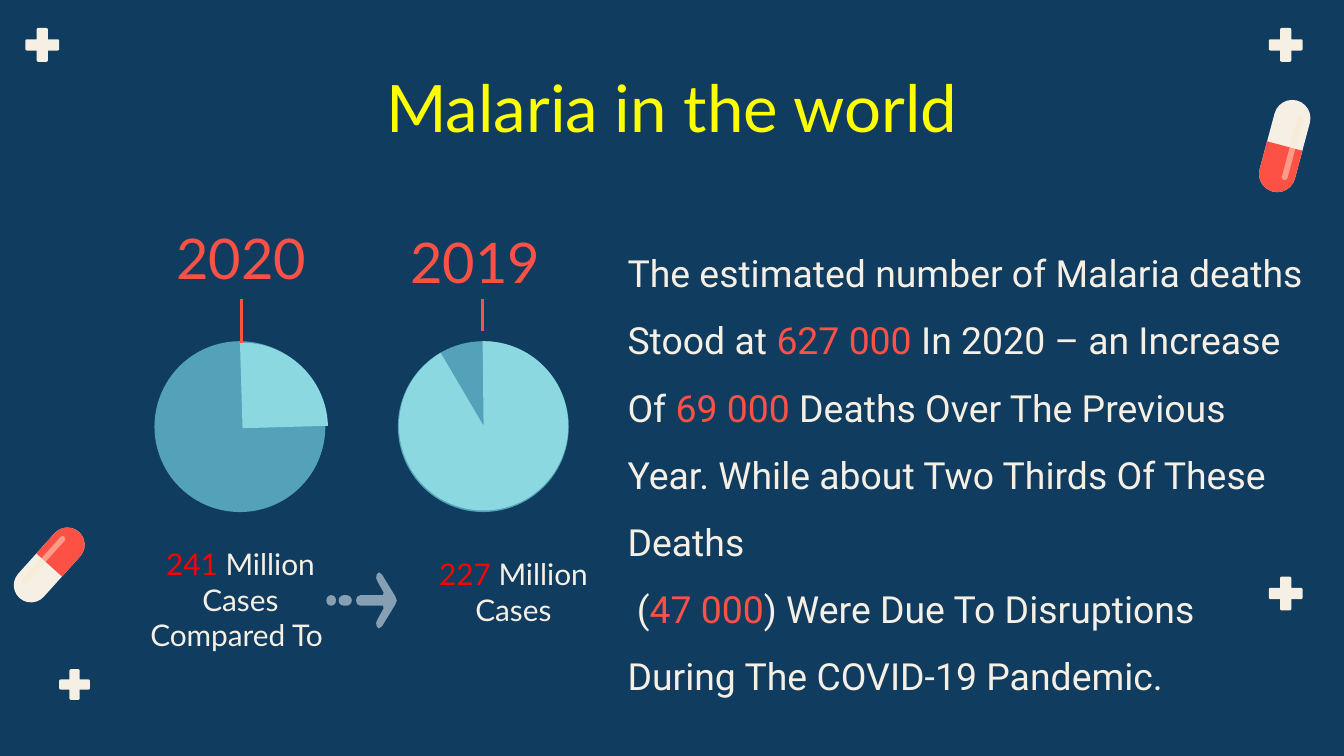
from math import cos, pi, radians, sin

from lxml import etree
from pptx import Presentation
from pptx.dml.color import RGBColor
from pptx.enum.shapes import MSO_CONNECTOR, MSO_SHAPE
from pptx.enum.text import MSO_ANCHOR, PP_ALIGN
from pptx.oxml.ns import qn
from pptx.util import Cm, Pt

CENTER, LEFT = PP_ALIGN.CENTER, PP_ALIGN.LEFT
TOP, MIDDLE = MSO_ANCHOR.TOP, MSO_ANCHOR.MIDDLE
OVAL, PIE = MSO_SHAPE.OVAL, MSO_SHAPE.PIE
ROUNDED, DOME = MSO_SHAPE.ROUNDED_RECTANGLE, MSO_SHAPE.ROUND_2_SAME_RECTANGLE
STRAIGHT = MSO_CONNECTOR.STRAIGHT

NAVY, CREAM, CORAL, RED, YELLOW = "103C60", "F6EFE4", "FE5145", "FF0000", "FFFF00"
TEAL, AQUA, STEEL, SHINE = "53A2B9", "8CD8E1", "869FB2", "FAE9CD"

TEXTS = [
    ((1.98, 1.02, 21.44, 1.6), "Lato", 35, CENTER, TOP, 1,
     [[("Malaria in the world", YELLOW)]]),
    ((2.51, 4.06, 4.11, 1.6), "Lato", 30, CENTER, MIDDLE, 1, [[("2020", CORAL)]]),
    ((6.93, 4.14, 4.11, 1.6), "Lato", 30, CENTER, MIDDLE, 1, [[("2019", CORAL)]]),
    ((2.49, 10.06, 4.11, 2.59), "Lato", 16, CENTER, TOP, 1,
     [[("241", RED), (" Million Cases Compared To ", CREAM)]]),
    ((7.65, 10.26, 4.11, 2.59), "Lato", 16, CENTER, TOP, 1,
     [[("227", RED), (" Million Cases", CREAM)]]),
    ((11.61, 4.06, 13.44, 8.79), "Roboto", 20, LEFT, TOP, 1.5, [
        [("The estimated number of Malaria deaths Stood at ", CREAM),
         ("627 000 ", CORAL),
         ("In 2020 – an Increase Of ", CREAM),
         ("69 000 ", CORAL),
         ("Deaths Over The Previous Year. While about Two Thirds Of These Deaths", CREAM)],
        [(" (", CREAM),
         ("47 000", CORAL),
         (") Were Due To Disruptions During The COVID-19 Pandemic.", CREAM)],
    ]),
]
CROSSES = [(1.12, 12.65, 0.58), (23.98, 10.9, 0.64), (23.98, 0.53, 0.64), (0.48, 0.53, 0.64)]
PILLS = [(0.93, 10.68, 0.65, 1.68, 42), (24.28, 2.76, 0.69, 1.78, 195)]
DISCS = [
    {"disc": (2.92, 6.45, 3.23), "slice": (2.97, 6.48, 3.23),
     "angles": (268.28, 358.38), "stem": (4.57, 5.66, 6.48)},
    {"disc": (7.52, 6.45, 3.23), "slice": (7.54, 6.45, 3.2),
     "angles": (269.37, 239.51), "stem": (9.12, 5.66, 6.25)},
]
ARROW_AXIS = 11.35
ARROW_UPPER = [(7.5, 11.35), (7.47, 11.27), (7.22, 10.86), (7.16, 10.82),
               (7.12, 10.86), (7.11, 10.93), (7.14, 11), (7.25, 11.2),
               (7.24, 11.25), (6.81, 11.25), (6.75, 11.28), (6.73, 11.35)]
ARROW_DOTS = [(6.4, 0.25), (6.17, 0.18)]
DOT_HEIGHT = 0.2


def color(value):
    return RGBColor.from_string(value)


def paint(shape, fill):
    shape.shadow.inherit = False
    shape.fill.solid()
    shape.fill.fore_color.rgb = color(fill)
    shape.line.fill.background()
    return shape


def add_preset(page, kind, left, top, width, height, fill):
    return paint(page.shapes.add_shape(kind, Cm(left), Cm(top), Cm(width), Cm(height)), fill)


def add_outline(page, points, fill):
    corners = [(Cm(x), Cm(y)) for x, y in points]
    builder = page.shapes.build_freeform(*corners[0])
    builder.add_line_segments(corners[1:], close=True)
    return paint(builder.convert_to_shape(), fill)


def add_cross(page, left, top, size):
    middle, arm, tip, radius = size / 2, size / 6, size / 2, size * 0.05
    points = []
    for turn in range(4):
        angle = turn * pi / 2
        local = [(arm, -arm)]
        for side in (-1, 1):
            for step in range(4):
                bend = pi / 6 * (step if side < 0 else 3 - step)
                local.append((tip - radius + radius * sin(bend),
                              side * (arm - radius + radius * cos(bend))))
        points += [(left + middle + x * cos(angle) - y * sin(angle),
                    top + middle + x * sin(angle) + y * cos(angle)) for x, y in local]
    add_outline(page, points, CREAM)


def add_pill(page, center_x, center_y, width, length, rotation):
    angle = radians(rotation)
    parts = [
        (ROUNDED, width, length, 0, 0, CREAM),
        (DOME, width, length / 2, 0, -length / 4, CORAL),
        (ROUNDED, width * 0.16, length * 0.7, -width * 0.22, 0, SHINE),
    ]
    for kind, wide, tall, across, along, fill in parts:
        x = center_x + across * cos(angle) - along * sin(angle)
        y = center_y + across * sin(angle) + along * cos(angle)
        part = add_preset(page, kind, x - wide / 2, y - tall / 2, wide, tall, fill)
        part.adjustments[0] = 0.5
        part.rotation = rotation
        if fill == SHINE:
            tint = part.fill._xPr.find(qn("a:solidFill"))[0]
            etree.SubElement(tint, qn("a:alpha")).set("val", "49000")


def add_disc(page, item):
    for kind, part, fill in ((OVAL, "disc", TEAL), (PIE, "slice", AQUA)):
        left, top, size = item[part]
        shape = add_preset(page, kind, left, top, size, size, fill)
        if kind == PIE:
            for index, degrees in enumerate(item["angles"]):
                shape.adjustments[index] = degrees * 0.6
    x, start, end = item["stem"]
    stem = page.shapes.add_connector(STRAIGHT, Cm(x), Cm(start), Cm(x), Cm(end))
    stem.line.color.rgb = color(CORAL)
    stem.line.width = Pt(1.5)
    etree.SubElement(stem._element.spPr, qn("a:effectLst"))


def add_arrow(page):
    lower = [(x, 2 * ARROW_AXIS - y) for x, y in ARROW_UPPER[-2:0:-1]]
    add_outline(page, ARROW_UPPER + lower, STEEL)
    for left, width in ARROW_DOTS:
        dot = add_preset(page, ROUNDED, left, ARROW_AXIS - DOT_HEIGHT / 2,
                         width, DOT_HEIGHT, STEEL)
        dot.adjustments[0] = 0.5


def add_text(page, place, font, size, alignment, anchor, spacing, paragraphs):
    frame = page.shapes.add_textbox(*map(Cm, place)).text_frame
    frame.word_wrap = True
    frame.vertical_anchor = anchor
    frame.margin_left = frame.margin_right = Cm(0.25)
    frame.margin_top = frame.margin_bottom = Cm(0.25)
    for index, spans in enumerate(paragraphs):
        para = frame.add_paragraph() if index else frame.paragraphs[0]
        para.alignment = alignment
        para.line_spacing = float(spacing)
        para.font.name = font
        para.font.size = Pt(size)
        for words, tone in spans:
            span = para.add_run()
            span.text = words
            span.font.color.rgb = color(tone)


def main():
    deck = Presentation()
    deck.slide_width, deck.slide_height = Cm(25.4), Cm(14.29)
    page = deck.slides.add_slide(deck.slide_layouts[6])
    page.background.fill.solid()
    page.background.fill.fore_color.rgb = color(NAVY)
    for cross in CROSSES:
        add_cross(page, *cross)
    for pill in PILLS:
        add_pill(page, *pill)
    for text in TEXTS:
        add_text(page, *text)
    for item in DISCS:
        add_disc(page, item)
    add_arrow(page)
    deck.save("out.pptx")


if __name__ == "__main__":
    main()
